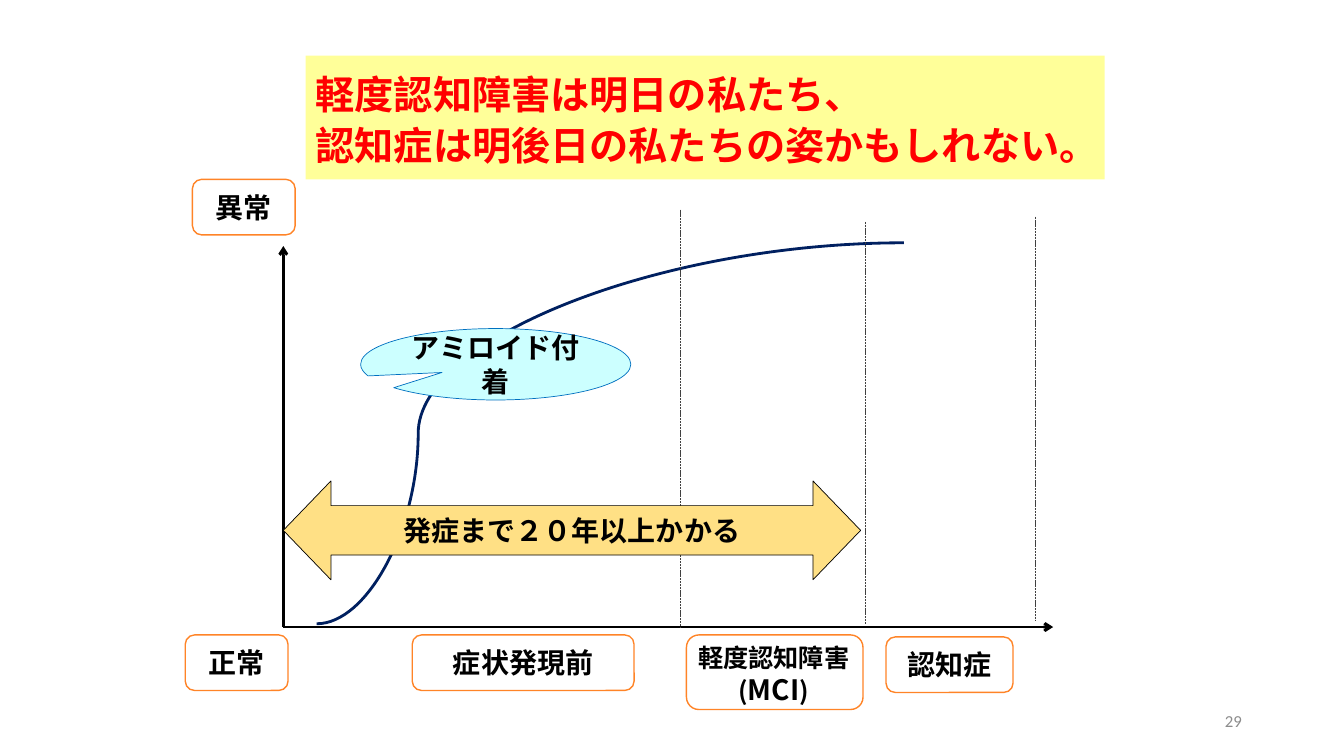
from lxml.etree import SubElement
from pptx import Presentation
from pptx.dml.color import RGBColor
from pptx.enum.dml import MSO_LINE
from pptx.enum.shapes import MSO_CONNECTOR, MSO_SHAPE
from pptx.enum.text import MSO_ANCHOR, MSO_AUTO_SIZE, PP_ALIGN
from pptx.oxml.ns import qn
from pptx.util import Cm, Pt

# Content; all lengths in cm
TITLE = "軽度認知障害は明日の私たち、\v認知症は明後日の私たちの姿かもしれない。"
TITLE_AT = (7.7, 1.4, 20.14, 3.12)
ORIGIN = (7.14, 15.8)
AXES = [(7.14, 6.2), (26.54, 15.8)]
LABELS = [
    ("正常", (4.67, 16, 2.59, 1.4)),
    ("症状発現前", (10.39, 16, 5.59, 1.4)),
    ("", (17.3, 16, 4.45, 1.88)),
    ("認知症", (22.33, 16.05, 3.2, 1.4)),
    ("異常", (4.85, 4.52, 2.59, 1.4)),
]
CURVE = ((7.98, 15.72), (22.78, 6.12))
BEND = 0.173
STAGES = [(17.15, 5.28, 15.8), (21.82, 5.59, 15.72), (26.09, 5.46, 15.62)]
CALLOUT = ("アミロイド付着", (9.09, 8.28, 6.81, 1.8))
SPAN = ("発症まで２０年以上かかる", (7.14, 12.12, 14.55, 2.49))
MCI = [[("軽度認知障害", 18)], [("(", 18), ("MCI", 20), (")", 18)]]
MCI_AT = (17.15, 16.05, 4.7, 1.88)
PAGE = ("29", (23.93, 17.65, 7.62, 1.02))

FONT = "Noto Sans CJK JP"
COLORS = {
    "black": "000000", "red": "FF0000", "yellow": "FFFF99",
    "orange": "FF8427", "navy": "002060", "dash": "404040",
    "cyan": "CCFFFF", "blue": "0070C0", "gold": "FFE085", "gray": "8C8C8C",
}


def color(name):
    return RGBColor.from_string(COLORS[name])


def place(at):
    return [Cm(n) for n in at]


def style(run, size, ink="black", face=FONT, bold=True):
    font = run.font
    font.size, font.bold, font.name = Pt(size), bold, face
    font.color.rgb = color(ink)
    SubElement(run._r.get_or_add_rPr(), qn("a:ea"), typeface=face)


def stroke(line, ink, width):
    line.color.rgb = color(ink)
    line.width = Pt(width)


def add_box(kind, text, at, ink, width, fill=None):
    box = slide.shapes.add_shape(kind, *place(at))
    box.shadow.inherit = False
    stroke(box.line, ink, width)
    if fill:
        box.fill.solid()
        box.fill.fore_color.rgb = color(fill)
    else:
        box.fill.background()
    if text:
        frame = box.text_frame
        frame.text = text
        frame.word_wrap = True
        frame.vertical_anchor = MSO_ANCHOR.MIDDLE
        para = frame.paragraphs[0]
        para.alignment = PP_ALIGN.CENTER
        style(para.runs[0], 20)
    return box


def add_line(start, end, ink, width, kind=MSO_CONNECTOR.STRAIGHT):
    line = slide.shapes.add_connector(kind, *place(start + end))
    stroke(line.line, ink, width)
    SubElement(line._element.spPr, qn("a:effectLst"))
    return line


def add_text(at):
    frame = slide.shapes.add_textbox(*place(at)).text_frame
    frame.word_wrap = True
    return frame


deck = Presentation()
deck.slide_width, deck.slide_height = Cm(33.87), Cm(19.05)
slide = deck.slides.add_slide(deck.slide_layouts[5])

title = slide.shapes.title
title.left, title.top, title.width, title.height = place(TITLE_AT)
title.fill.solid()
title.fill.fore_color.rgb = color("yellow")
frame = title.text_frame
frame.text = TITLE
frame.word_wrap = True
frame.auto_size = MSO_AUTO_SIZE.NONE
frame.vertical_anchor = MSO_ANCHOR.MIDDLE
para = frame.paragraphs[0]
para.alignment = PP_ALIGN.LEFT
para.line_spacing = Pt(36)
for run in para.runs:
    style(run, 28, "red")

for end in AXES:
    axis = add_line(ORIGIN, end, "black", 2)
    SubElement(axis.line._get_or_add_ln(), qn("a:tailEnd"), type="arrow")

for text, at in LABELS:
    add_box(MSO_SHAPE.FLOWCHART_ALTERNATE_PROCESS, text, at, "orange", 1)

curve = add_line(*CURVE, "navy", 2, MSO_CONNECTOR.CURVE)
guides = curve._element.spPr.find(qn("a:prstGeom")).find(qn("a:avLst"))
SubElement(guides, qn("a:gd"), name="adj1", fmla=f"val {round(BEND * 100000)}")

for x, top, bottom in STAGES:
    stage = add_line((x, top), (x, bottom), "dash", 0.5)
    stage.line.dash_style = MSO_LINE.SQUARE_DOT

callout = add_box(MSO_SHAPE.OVAL_CALLOUT, *CALLOUT, "blue", 0.5, "cyan")
callout.adjustments[0], callout.adjustments[1] = -0.199, 0.115
span = add_box(MSO_SHAPE.LEFT_RIGHT_ARROW, *SPAN, "black", 0.5, "gold")
span.adjustments[0], span.adjustments[1] = 0.5, 0.482

frame = add_text(MCI_AT)
for i, parts in enumerate(MCI):
    para = frame.add_paragraph() if i else frame.paragraphs[0]
    para.alignment = PP_ALIGN.CENTER
    for text, size in parts:
        run = para.add_run()
        run.text = text
        style(run, size)

text, at = PAGE
frame = add_text(at)
frame.text = text
frame.vertical_anchor = MSO_ANCHOR.MIDDLE
para = frame.paragraphs[0]
para.alignment = PP_ALIGN.RIGHT
style(para.runs[0], 12, "gray", "Calibri", False)

deck.save("out.pptx")
